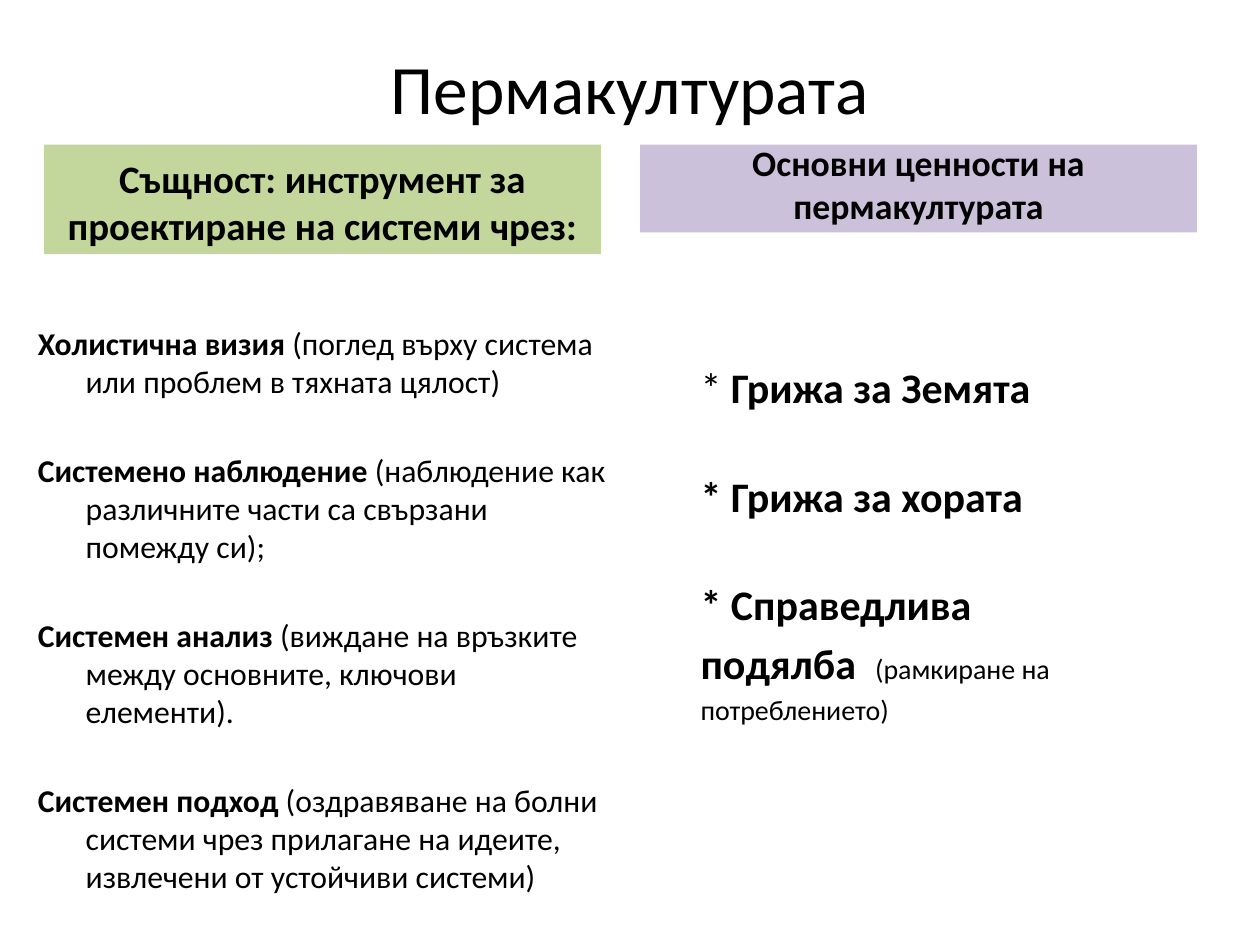
from pptx import Presentation
from pptx.dml.color import RGBColor
from pptx.enum.text import MSO_ANCHOR as Anchor, MSO_AUTO_SIZE as AutoSize, PP_ALIGN as Align
from pptx.oxml.ns import qn
from pptx.util import Inches, Pt

BLACK = RGBColor(0x00, 0x00, 0x00)
GREEN = RGBColor(0xC3, 0xD6, 0x9B)
LILAC = RGBColor(0xCC, 0xC1, 0xDA)

FONT = "Calibri"
WIDTH, HEIGHT = 10, 7.5
COMPARISON_LAYOUT = 4
INDENT = 0.38


def add_run(paragraph, text, size, bold=False, color=BLACK):
    run = paragraph.add_run()
    run.text = text
    run.font.name, run.font.size = FONT, Pt(size)
    run.font.bold, run.font.color.rgb = bold, color


class ComparisonSlide:
    """Fills the placeholders of a comparison layout; lengths are shares of the slide."""

    def __init__(self, presentation):
        layout = presentation.slide_layouts[COMPARISON_LAYOUT]
        self.slide = presentation.slides.add_slide(layout)

    def place(self, index, left, top, width, height, anchor):
        shape = self.slide.placeholders[index]
        shape.left, shape.width = (Inches(WIDTH * share) for share in (left, width))
        shape.top, shape.height = (Inches(HEIGHT * share) for share in (top, height))
        frame = shape.text_frame
        frame.word_wrap = True
        frame.auto_size = AutoSize.NONE
        frame.vertical_anchor = anchor
        return shape

    def heading(self, index, text, *box, size, anchor=Anchor.BOTTOM, fill=None, bold=True):
        shape = self.place(index, *box, anchor)
        if fill is not None:
            shape.fill.solid()
            shape.fill.fore_color.rgb = fill
        paragraph = shape.text_frame.paragraphs[0]
        paragraph.alignment = Align.CENTER
        add_run(paragraph, text, size, bold)

    def item_list(self, index, items, *box, inset, hanging):
        """Each item is its space before in points and its (text, size, bold) runs."""
        frame = self.place(index, *box, Anchor.TOP).text_frame
        frame.margin_top = Inches(inset)
        for number, (space, runs) in enumerate(items):
            paragraph = frame.add_paragraph() if number else frame.paragraphs[0]
            paragraph.space_before = Pt(space)
            properties = paragraph._p.get_or_add_pPr()
            properties.set("marL", str(Inches(INDENT)))
            properties.set("indent", str(-Inches(INDENT) if hanging else 0))
            properties.append(properties.makeelement(qn("a:buNone"), {}))
            for text, size, bold in runs:
                add_run(paragraph, text, size, bold)


def main():
    presentation = Presentation()
    presentation.slide_width, presentation.slide_height = Inches(WIDTH), Inches(HEIGHT)
    page = ComparisonSlide(presentation)

    # Title and column headings
    page.heading(0, "Пермакултурата", 0.05, 0.04, 0.9, 0.103,
                 size=39.6, anchor=Anchor.MIDDLE, bold=False)
    page.heading(1, "Същност: инструмент за проектиране на системи чрез:",
                 0.035, 0.153, 0.442, 0.116, size=22.2, fill=GREEN)
    page.heading(3, "Основни ценности на пермакултурата",
                 0.508, 0.153, 0.442, 0.093, size=20.4, fill=LILAC)

    # Left column: methods with explanations
    methods = [
        ("Холистична визия ", "(поглед върху система или проблем в тяхната цялост)"),
        ("Системено наблюдение ",
         "(наблюдение как различните части са свързани помежду си);"),
        ("Системен анализ ", "(виждане на връзките между основните, ключови елементи)."),
        ("Системен подход ",
         "(оздравяване на болни системи чрез прилагане на идеите, "
         "извлечени от устойчиви системи)"),
    ]
    method_items = [
        (29 if number else 0, [(name, 18.1, True), (detail, 18.1, False)])
        for number, (name, detail) in enumerate(methods)
    ]
    page.item_list(2, method_items, 0.02, 0.248, 0.472, 0.724, inset=0.71, hanging=True)

    # Right column: core values
    value_items = [
        (0, [("* ", 24, False), ("Грижа за Земята", 24, True)]),
        (33, [("* Грижа за хората", 24, True)]),
        (33, [("* Справедлива", 24, True)]),
        (4.8, [("подялба  ", 24, True), ("(рамкиране на", 16, False)]),
        (3.2, [("потреблението)", 16, False)]),
    ]
    page.item_list(4, value_items, 0.508, 0.259, 0.442, 0.635, inset=0.93, hanging=False)

    presentation.save("out.pptx")


if __name__ == "__main__":
    main()
